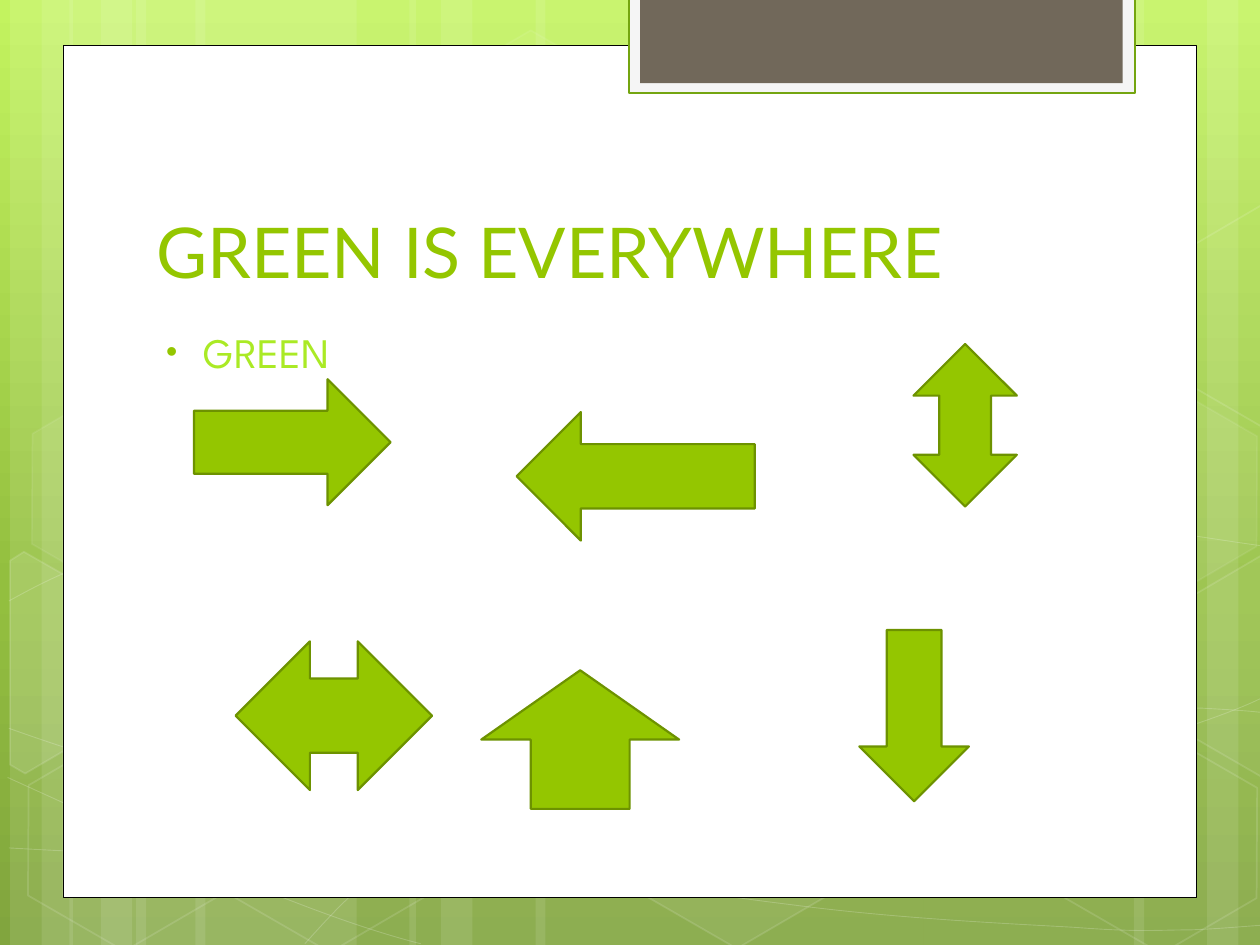
from copy import deepcopy
from dataclasses import dataclass
from typing import Optional

from lxml.etree import SubElement
from pptx import Presentation
from pptx.dml.color import RGBColor as Rgb
from pptx.enum.shapes import MSO_SHAPE as Geo
from pptx.enum.text import MSO_ANCHOR as Anchor, PP_ALIGN as Align
from pptx.oxml.ns import qn
from pptx.util import Cm, Pt


@dataclass(frozen=True)
class Theme:
    sky: tuple = ((0, "C3F35F"), (0.62, "93BF3F"), (1, "81A53E"))
    white: str = "FFFFFF"
    black: str = "000000"
    green: str = "94C600"
    dark_green: str = "6D9200"
    light_green: str = "AAEA25"
    tab_edge: str = "74A510"
    tab_paper: str = "F5F5F5"
    tab_core: str = "71685A"
    title_font: str = "Lato"
    title_size: int = 40
    body_font: str = "League Spartan"
    body_size: int = 24


@dataclass(frozen=True)
class Paint:
    fill: Optional[str] = None
    fill_alpha: int = 100
    line: Optional[str] = None
    line_width: float = 1
    line_alpha: int = 100


@dataclass(frozen=True)
class Box:
    left: float
    top: float
    width: float
    height: float

    def lengths(self):
        return [units(n) for n in (self.left, self.top, self.width, self.height)]


@dataclass(frozen=True)
class Wave:
    knots: list
    straight_step: Optional[int] = None


@dataclass(frozen=True)
class Hexagon:
    left: float
    top: float
    fill_alpha: int
    line_alpha: int


@dataclass(frozen=True)
class Arrow:
    geometry: Geo
    box: Box


THEME = Theme()
SLIDE_WIDTH, SLIDE_HEIGHT = 10, 7.5
WIDE, NARROW, MEDIUM = 1.75, 0.5, 0.83

STRIPES = [
    (1.08, WIDE), (0.08, NARROW), (0.33, MEDIUM),
    (1.55, WIDE), (0.55, NARROW), (0.8, MEDIUM),
    (7.33, WIDE), (9.58, NARROW), (9, MEDIUM),
    (4.25, 3.08), (3.25, NARROW), (3.5, MEDIUM),
]

WAVES = [
    Wave([(0.07, 6.73), (0.61, 6.76), (1.15, 6.79), (1.9, 6.78), (2.65, 6.77),
          (3.58, 6.75), (4.58, 6.65), (5.58, 6.55), (7, 6.36), (7.92, 6.17),
          (8.83, 5.98), (9.77, 5.68), (10.07, 5.51)]),
    Wave([(0.07, 4.77), (0.36, 4.61), (0.65, 4.46), (1.21, 4.31), (1.78, 4.16),
          (2.59, 3.94), (3.47, 3.87), (4.36, 3.8), (5.44, 3.79), (6.54, 3.87),
          (7.64, 3.95), (9.47, 4.26), (10.07, 4.34)]),
    Wave([(0.06, 6.17), (1.27, 6.72), (2.47, 7.27), (3.34, 7.49)]),
    Wave([(0.07, 5.78), (0.38, 5.89), (0.7, 6), (1.28, 6.16), (1.86, 6.31),
          (2.73, 6.56), (3.57, 6.73), (4.4, 6.9), (5.45, 7.08), (6.28, 7.18),
          (7.11, 7.29), (8, 7.33), (8.53, 7.36), (9.05, 7.4), (9.19, 7.38),
          (9.45, 7.38), (9.71, 7.37), (9.89, 7.35), (10.07, 7.34)]),
    Wave([(2.42, 7.49), (2.6, 7.29), (2.78, 7.09), (3.02, 6.91), (3.26, 6.73),
          (3.6, 6.53), (3.88, 6.39), (4.16, 6.25), (4.33, 6.19), (4.7, 6.09),
          (5.06, 5.99), (5.73, 5.85), (6.08, 5.78), (6.44, 5.71), (6.49, 5.71),
          (6.8, 5.69), (7.11, 5.66), (7.6, 5.63), (7.94, 5.62), (8.29, 5.61),
          (8.86, 5.62), (8.86, 5.62), (9.53, 5.62), (9.71, 5.63), (9.88, 5.64),
          (9.97, 5.65), (10.06, 5.66), (10.03, 5.65), (10.06, 5.66)], 21),
]

HEXAGONS = [
    Hexagon(3.34, 0.36, 4, 8), Hexagon(4.97, 5.89, 6, 12),
    Hexagon(0.11, 5.91, 0, 12), Hexagon(0.14, 3.12, 7, 8),
    Hexagon(1.74, 5.92, 0, 12), Hexagon(7.53, 4.53, 10, 12),
    Hexagon(8.34, 5.93, 0, 12), Hexagon(8.34, 3.14, 7, 8),
]

CUT_HEXAGONS = [
    (10, [(0.08, 4.45), (0.19, 4.38), (0.96, 4.82), (0.95, 5.7), (0.2, 6.14), (0.08, 6.07)]),
    (4, [(9.26, 4.85), (10.01, 4.41), (10.09, 4.46), (10.09, 6.13), (10.02, 6.17), (9.26, 5.73)]),
    (0, [(9.26, 2.07), (10.01, 1.63), (10.1, 1.68), (10.09, 3.35), (10.02, 3.39), (9.26, 2.95)]),
]

ARROWS = [
    Arrow(Geo.RIGHT_ARROW, Box(1.54, 3.01, 1.56, 1)),
    Arrow(Geo.LEFT_ARROW, Box(4.1, 3.27, 1.89, 1.02)),
    Arrow(Geo.UP_ARROW, Box(3.82, 5.32, 1.57, 1.1)),
    Arrow(Geo.DOWN_ARROW, Box(6.82, 5, 0.87, 1.36)),
    Arrow(Geo.LEFT_RIGHT_ARROW, Box(1.87, 5.09, 1.56, 1.18)),
    Arrow(Geo.UP_DOWN_ARROW, Box(7.25, 2.73, 0.82, 1.29)),
]


def units(count: float) -> Cm:
    return Cm(2.54 * count)


def set_color(fill, color: str, alpha: int) -> None:
    fill.solid()
    fill.fore_color.rgb = Rgb.from_string(color)
    if alpha < 100:
        rgb = fill._xPr.find(qn("a:solidFill"))[0]
        SubElement(rgb, qn("a:alpha"), val=str(alpha * 1000))


def apply_paint(shape, paint: Paint) -> None:
    shape.shadow.inherit = False
    if paint.fill and paint.fill_alpha:
        set_color(shape.fill, paint.fill, paint.fill_alpha)
    else:
        shape.fill.background()
    if paint.line:
        set_color(shape.line.fill, paint.line, paint.line_alpha)
        shape.line.width = Pt(paint.line_width)
    else:
        shape.line.fill.background()


def draw_preset(slide, geometry: Geo, box: Box, paint: Paint):
    shape = slide.shapes.add_shape(geometry, *box.lengths())
    apply_paint(shape, paint)
    return shape


def draw_outline(slide, points: list, paint: Paint, close: bool):
    corners = [(units(x), units(y)) for x, y in points]
    builder = slide.shapes.build_freeform(*corners[0])
    builder.add_line_segments(corners[1:], close=close)
    shape = builder.convert_to_shape()
    apply_paint(shape, paint)
    return shape


def draw_wave(slide, wave: Wave) -> None:
    paint = Paint(line=THEME.white, line_width=0.5, line_alpha=20)
    outline = draw_outline(slide, wave.knots, paint, False).element.find(".//" + qn("a:path"))
    steps = outline.findall(qn("a:lnTo"))
    if wave.straight_step is not None:
        steps.pop(wave.straight_step)
    for first in range(0, len(steps), 3):
        bend = steps[first:first + 3]
        curve = SubElement(outline, qn("a:cubicBezTo"))
        bend[0].addprevious(curve)
        for step in bend:
            curve.append(step[0])
            outline.remove(step)


def draw_backdrop(slide) -> None:
    sky = slide.background.fill
    sky.gradient()
    sky.gradient_angle = 270
    stops = slide.element.find(".//" + qn("a:gsLst"))
    stops.insert(1, deepcopy(stops[0]))
    for stop, (position, color) in zip(sky.gradient_stops, THEME.sky):
        stop.position = position
        stop.color.rgb = Rgb.from_string(color)
    for left, width in STRIPES:
        draw_preset(slide, Geo.RECTANGLE, Box(left, 0, width, SLIDE_HEIGHT), Paint(THEME.white, 10))
    for wave in WAVES:
        draw_wave(slide, wave)
    for cell in HEXAGONS:
        paint = Paint(THEME.white, cell.fill_alpha, THEME.white, 1, cell.line_alpha)
        hexagon = draw_preset(slide, Geo.HEXAGON, Box(cell.left, cell.top, 1.75, 1.52), paint)
        hexagon.adjustments[0] = 0.285
        hexagon.rotation = 30
    for fill_alpha, corners in CUT_HEXAGONS:
        draw_outline(slide, corners, Paint(THEME.white, fill_alpha, THEME.white, 1, 12), True)


def draw_panel(slide) -> None:
    draw_preset(slide, Geo.RECTANGLE, Box(0.5, 0.36, 9, 6.76), Paint(THEME.white, line=THEME.black, line_width=0.5))
    draw_preset(slide, Geo.RECTANGLE, Box(4.99, -0.02, 4.02, 0.76),
                Paint(THEME.tab_paper, line=THEME.tab_edge, line_width=1.25))
    draw_preset(slide, Geo.RECTANGLE, Box(5.08, -0.02, 3.83, 0.68), Paint(THEME.tab_core))


def write_line(holder, box: Box, anchor: Anchor, text: str, font: str, size: int, color: str):
    holder.left, holder.top, holder.width, holder.height = box.lengths()
    frame = holder.text_frame
    frame.word_wrap = True
    frame.vertical_anchor = anchor
    paragraph = frame.paragraphs[0]
    paragraph.alignment = Align.LEFT
    run = paragraph.add_run()
    run.text = text
    run.font.name = font
    run.font.size = Pt(size)
    run.font.color.rgb = Rgb.from_string(color)
    return paragraph


def add_bullet(paragraph) -> None:
    paragraph.space_before = Pt(5)
    properties = paragraph._p.get_or_add_pPr()
    properties.set("marL", str(units(0.38)))
    properties.set("indent", str(units(-0.3)))
    SubElement(SubElement(properties, qn("a:buClr")), qn("a:srgbClr"), val=THEME.green)
    SubElement(properties, qn("a:buSzPct"), val="76000")
    SubElement(properties, qn("a:buFont"), typeface="Arial")
    SubElement(properties, qn("a:buChar"), char="•")


def main() -> None:
    deck = Presentation()
    deck.slide_width, deck.slide_height = units(SLIDE_WIDTH), units(SLIDE_HEIGHT)
    slide = deck.slides.add_slide(deck.slide_layouts[5])
    draw_backdrop(slide)
    draw_panel(slide)

    heading = slide.shapes.title
    heading.element.getparent().append(heading.element)
    write_line(heading, Box(1.14, 1.12, 7.68, 1.25), Anchor.BOTTOM, "GREEN IS EVERYWHERE",
               THEME.title_font, THEME.title_size, THEME.green)
    body_box = Box(1.14, 2.54, 7.41, 3.84)
    body = slide.shapes.add_textbox(*body_box.lengths())
    add_bullet(write_line(body, body_box, Anchor.TOP, "GREEN", THEME.body_font, THEME.body_size, THEME.light_green))

    for arrow in ARROWS:
        draw_preset(slide, arrow.geometry, arrow.box, Paint(THEME.green, line=THEME.dark_green, line_width=1.25))
    deck.save("out.pptx")


if __name__ == "__main__":
    main()
